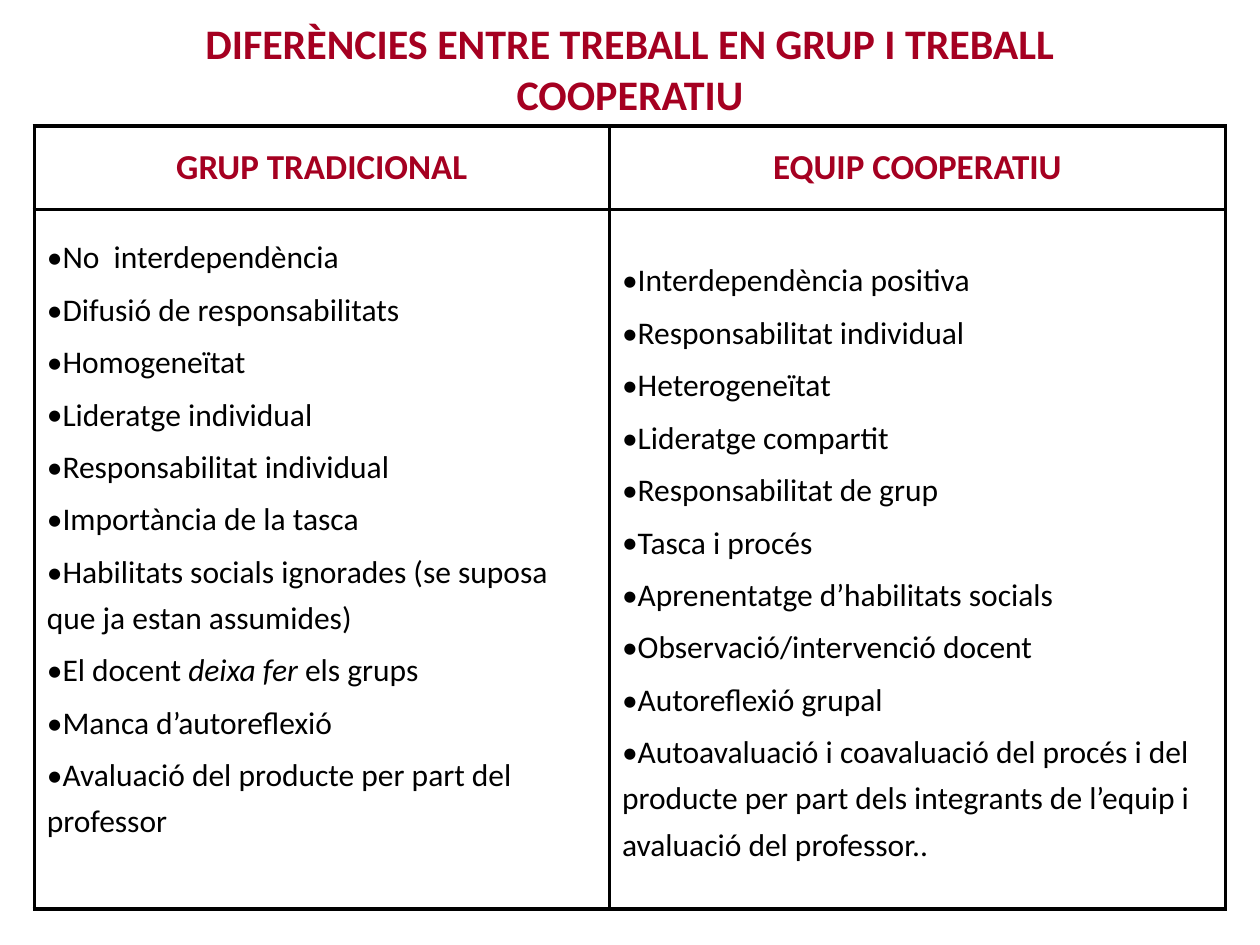
"""Builds a slide comparing traditional groups with cooperative teams."""
from pptx import Presentation, util as u
from pptx.dml import color
from pptx.enum import text
from pptx.oxml import parse_xml
from pptx.oxml.ns import nsdecls

COLORS = {"heading": "A50021", "body": "000000", "border": "000000", "cell": "FFFFFF"}
FONT = "Calibri"
LEFT, CENTER, JUSTIFY = text.PP_ALIGN.LEFT, text.PP_ALIGN.CENTER, text.PP_ALIGN.JUSTIFY

TITLE = "DIFERÈNCIES ENTRE TREBALL EN GRUP I TREBALL COOPERATIU"
COLUMNS = [
    ("GRUP TRADICIONAL", 328.7, 30, [
        (LEFT, ["No  interdependència"]),
        (LEFT, ["Difusió de responsabilitats"]),
        (LEFT, ["Homogeneïtat"]),
        (LEFT, ["Lideratge individual"]),
        (LEFT, ["Responsabilitat individual"]),
        (LEFT, ["Importància de la tasca"]),
        (LEFT, ["Habilitats socials ignorades (se suposa que ja estan assumides)"]),
        (LEFT, ["El docent ", "deixa fer", " els grups"]),
        (LEFT, ["Manca d’autoreflexió"]),
        (LEFT, ["Avaluació del producte per part del professor"]),
    ]),
    ("EQUIP COOPERATIU", 352, 3.6, [
        (JUSTIFY, ["Interdependència positiva"]),
        (JUSTIFY, ["Responsabilitat individual"]),
        (JUSTIFY, ["Heterogeneïtat"]),
        (JUSTIFY, ["Lideratge compartit"]),
        (JUSTIFY, ["Responsabilitat de grup"]),
        (JUSTIFY, ["Tasca i procés"]),
        (LEFT, ["Aprenentatge d’habilitats socials"]),
        (LEFT, ["Observació/intervenció docent"]),
        (JUSTIFY, ["Autoreflexió grupal"]),
        (LEFT, ["Autoavaluació i coavaluació del procés i del producte per part "
                "dels integrants de l’equip i avaluació del professor.."]),
    ]),
]


def add_span(para, wording, size, tone, bold=False, italic=False):
    span = para.add_run()
    span.text = wording
    span.font.name = FONT
    span.font.size = u.Pt(size)
    span.font.bold = bold
    span.font.italic = italic
    span.font.color.rgb = color.RGBColor.from_string(COLORS[tone])


def style_cell(cell):
    cell.vertical_anchor = text.MSO_ANCHOR.MIDDLE
    cell.fill.solid()
    cell.fill.fore_color.rgb = color.RGBColor.from_string(COLORS["cell"])
    for position, side in enumerate("LRTB"):
        cell._tc.get_or_add_tcPr().insert(position, parse_xml(
            f'<a:ln{side} {nsdecls("a")} w="{u.Pt(2.25)}"><a:solidFill>'
            f'<a:srgbClr val="{COLORS["border"]}"/></a:solidFill></a:ln{side}>'))


deck = Presentation()
deck.slide_width, deck.slide_height = u.Pt(720), u.Pt(540)
page = deck.slides.add_slide(deck.slide_layouts[6])

box = page.shapes.add_textbox(u.Pt(54), u.Pt(0), u.Pt(612), u.Pt(77.8))
box.text_frame.word_wrap = True
box.text_frame.vertical_anchor = text.MSO_ANCHOR.MIDDLE
para = box.text_frame.paragraphs[0]
para.alignment = CENTER
add_span(para, TITLE, 24, "heading", bold=True)

frame = page.shapes.add_table(2, 2, u.Pt(19.6), u.Pt(72), u.Pt(680.7), u.Pt(447.5))
table = frame.table
table.first_row = table.horz_banding = False
table.rows[0].height, table.rows[1].height = u.Pt(47.7), u.Pt(399.8)

for column, (heading, width, bottom, items) in enumerate(COLUMNS):
    table.columns[column].width = u.Pt(width)
    header, body = table.cell(0, column), table.cell(1, column)
    style_cell(header)
    style_cell(body)
    para = header.text_frame.paragraphs[0]
    para.alignment = CENTER
    add_span(para, heading, 20, "heading", bold=True)

    body.margin_bottom = u.Pt(bottom)
    for row, (alignment, pieces) in enumerate(items):
        para = body.text_frame.add_paragraph() if row else body.text_frame.paragraphs[0]
        for bullet in (f'buFont {nsdecls("a")} typeface="{FONT}"', f'buChar {nsdecls("a")} char="•"'):
            para._p.get_or_add_pPr().append(parse_xml(f"<a:{bullet}/>"))
        para.alignment = alignment
        para.line_spacing = 1.2
        para.space_before = u.Pt(3.6 if row else 0)
        for piece in pieces:
            add_span(para, piece, 18, "body", italic=piece == "deixa fer")

deck.save("out.pptx")
